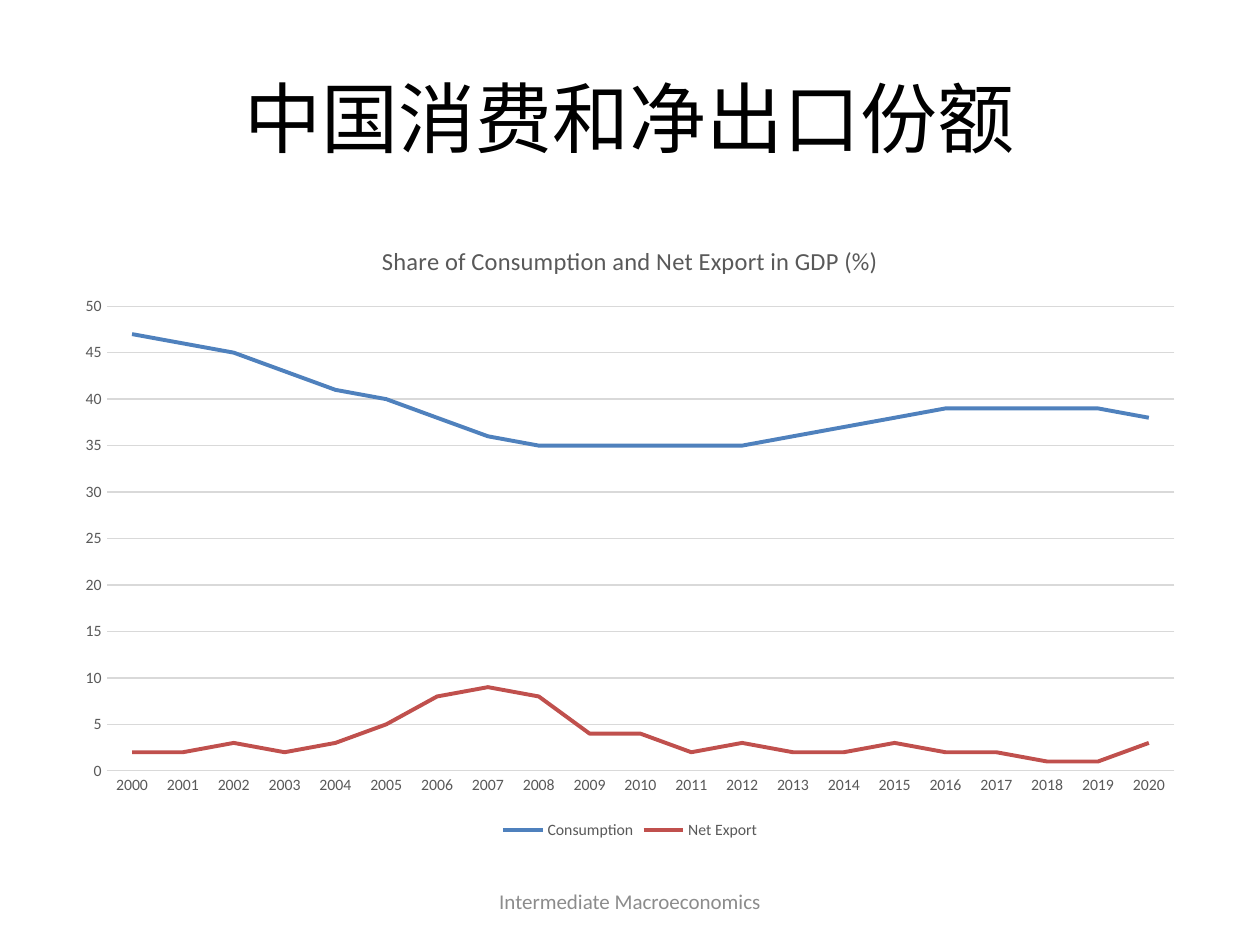
from pptx import Presentation
from pptx.chart.data import CategoryChartData
from pptx.dml.color import RGBColor
from pptx.enum.chart import XL_CHART_TYPE as ChartType, XL_LEGEND_POSITION as LegendSide
from pptx.enum.chart import XL_MARKER_STYLE as Marker, XL_TICK_MARK as Tick
from pptx.enum.text import MSO_ANCHOR as Anchor, PP_ALIGN as Align
from pptx.util import Pt

TITLE = "中国消费和净出口份额"
FOOTER = "Intermediate Macroeconomics"
CHART_TITLE = "Share of Consumption and Net Export in GDP (%)"
YEARS = [str(year) for year in range(2000, 2021)]

BLACK = RGBColor(0x00, 0x00, 0x00)
GRAY = RGBColor(0x59, 0x59, 0x59)
FOOTER_GRAY = RGBColor(0x8C, 0x8C, 0x8C)
GRID_GRAY = RGBColor(0xD9, 0xD9, 0xD9)
BLUE = RGBColor(0x4F, 0x81, 0xBD)
RED = RGBColor(0xC0, 0x50, 0x4D)
FONT = "Calibri"

SERIES = [
    ("Consumption", BLUE, [47, 46, 45, 43, 41, 40, 38, 36, 35, 35, 35,
                           35, 35, 36, 37, 38, 39, 39, 39, 39, 38]),
    ("Net Export", RED, [2, 2, 3, 2, 3, 5, 8, 9, 8, 4, 4,
                         2, 3, 2, 2, 3, 2, 2, 1, 1, 3]),
]


def set_font(font, size, color):
    font.name = FONT
    font.size = Pt(size)
    font.bold = False
    font.color.rgb = color


def set_line(line, color, width):
    line.color.rgb = color
    line.width = Pt(width)


def write(frame, text, size, color, align=Align.CENTER, anchor=Anchor.MIDDLE):
    frame.word_wrap = True
    frame.vertical_anchor = anchor
    para = frame.paragraphs[0]
    para.alignment = align
    span = para.add_run()
    span.text = text
    set_font(span.font, size, color)


def add_share_chart(page):
    data = CategoryChartData()
    data.categories = YEARS
    for name, _, values in SERIES:
        data.add_series(name, values)
    chart = page.shapes.add_chart(
        ChartType.LINE, Pt(36), Pt(126), Pt(648), Pt(356.4), data).chart
    set_font(chart.font, 10, BLACK)

    chart.has_title = True
    span = chart.chart_title.text_frame.paragraphs[0].add_run()
    span.text = CHART_TITLE
    set_font(span.font, 14, GRAY)
    chart.chart_title.include_in_layout = False

    chart.has_legend = True
    chart.legend.position = LegendSide.BOTTOM
    chart.legend.include_in_layout = False
    set_font(chart.legend.font, 9, GRAY)

    for axis in (chart.category_axis, chart.value_axis):
        axis.major_tick_mark = axis.minor_tick_mark = Tick.NONE
        set_font(axis.tick_labels.font, 9, GRAY)
    set_line(chart.category_axis.format.line, GRID_GRAY, 0.75)

    scale = chart.value_axis
    scale.minimum_scale, scale.maximum_scale, scale.major_unit = 0, 50, 5
    scale.format.line.fill.background()
    set_line(scale.major_gridlines.format.line, GRID_GRAY, 0.75)

    chart.plots[0].vary_by_categories = False
    for series, (_, color, _) in zip(chart.plots[0].series, SERIES):
        series.smooth = False
        series.marker.style = Marker.NONE
        set_line(series.format.line, color, 2.25)


def main():
    deck = Presentation()
    deck.slide_width, deck.slide_height = Pt(720), Pt(540)
    page = deck.slides.add_slide(deck.slide_layouts[5])

    title = page.shapes.title
    title.left, title.top, title.width, title.height = Pt(36), Pt(21.6), Pt(648), Pt(90)
    write(title.text_frame, TITLE, 44, BLACK)

    add_share_chart(page)

    footer = page.shapes.add_textbox(Pt(246), Pt(500.5), Pt(228), Pt(28.75))
    write(footer.text_frame, FOOTER, 12, FOOTER_GRAY)

    deck.save("out.pptx")


if __name__ == "__main__":
    main()
